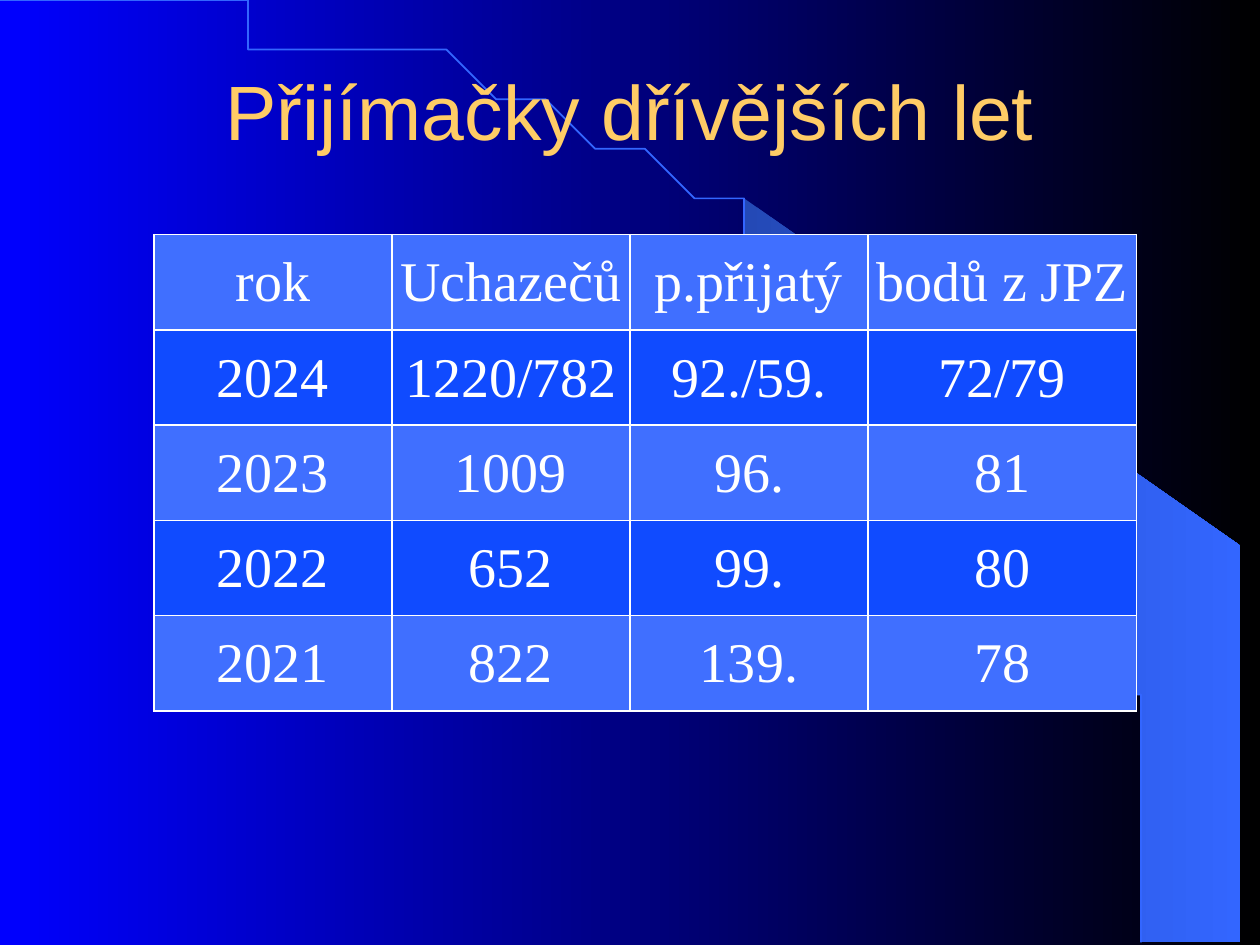
from math import asin, cos, pi, sin

from lxml.etree import SubElement
from pptx import Presentation
from pptx.dml.color import RGBColor
from pptx.enum.text import MSO_ANCHOR, PP_ALIGN
from pptx.oxml.ns import qn
from pptx.util import Cm, Pt

TITLE = "Přijímačky dřívějších let"
ROWS = [
    ("rok", "Uchazečů", "p.přijatý", "bodů z JPZ"),
    ("2024", "1220/782", "92./59.", "72/79"),
    ("2023", "1009", "96.", "81"),
    ("2022", "652", "99.", "80"),
    ("2021", "822", "139.", "78"),
]
COLUMN_WIDTHS = (4.8, 4.8, 4.8, 5.41)
ROW_HEIGHT = 1.92
BAND_FILLS = ("406FFF", "104BFF")
ARC_WIDTH, ARC_HEIGHT = 23.37, 19.02
BEAM_LEFT, BEAM_RIGHT, BEAM_CORNER = 14.96, 25.37, 10.74


def rgb(value):
    """Turn a hex string into a colour."""
    return RGBColor.from_string(value)


def fill_gradient(fill, *colours):
    """Apply a left-to-right gradient of two colours."""
    fill.gradient()
    fill.gradient_angle = 0
    for stop, colour in zip(fill.gradient_stops, colours):
        stop.color.rgb = rgb(colour)


def arc_points(start, steps=60):
    """List points on the quarter ellipse from the start angle to its foot."""
    angles = [start + (pi / 2 - start) * step / steps for step in range(steps + 1)]
    return [(ARC_WIDTH * sin(a), ARC_HEIGHT * (1 - cos(a))) for a in angles]


def add_outline(slide, points, close):
    """Draw a freeform through points given in centimetres."""
    builder = slide.shapes.build_freeform(*points[0], scale=Cm(1))
    builder.add_line_segments(points[1:], close=close)
    shape = builder.convert_to_shape()
    shape.shadow.inherit = False
    return shape


def add_text(paragraph, text, font_name, size, colour):
    """Add one centred, formatted run."""
    paragraph.alignment = PP_ALIGN.CENTER
    run = paragraph.add_run()
    run.text = text
    run.font.name = font_name
    run.font.size = Pt(size)
    run.font.color.rgb = rgb(colour)


def add_borders(cell, colour, width):
    """Give a cell the same line on all four sides."""
    properties = cell._tc.get_or_add_tcPr()
    for position, side in enumerate(("a:lnL", "a:lnR", "a:lnT", "a:lnB")):
        line = SubElement(properties, qn(side), w=str(Pt(width)))
        SubElement(SubElement(line, qn("a:solidFill")), qn("a:srgbClr"), val=colour)
        properties.insert(position, line)


def add_backdrop(slide):
    """Draw the background, the beam and the arc."""
    fill_gradient(slide.background.fill, "0000FF", "000000")
    edge = arc_points(asin(BEAM_LEFT / ARC_WIDTH))
    corners = [(BEAM_RIGHT, ARC_HEIGHT), (BEAM_RIGHT, BEAM_CORNER)]
    beam = add_outline(slide, edge + corners, True)
    fill_gradient(beam.fill, "2449B6", "3366FF")
    beam.line.fill.background()
    arc = add_outline(slide, arc_points(0), False)
    arc.fill.background()
    arc.line.color.rgb = rgb("3366FF")
    arc.line.width = Pt(1)


def add_title(slide):
    """Place the title in front of the backdrop."""
    title = slide.shapes.title
    title.element.getparent().append(title.element)
    title.left, title.top, title.width, title.height = Cm(1.9), Cm(0.91), Cm(21.6), Cm(2.59)
    title.text_frame.vertical_anchor = MSO_ANCHOR.MIDDLE
    add_text(title.text_frame.paragraphs[0], TITLE, "Arial", 44, "FFCC66")


def add_results(slide):
    """Build the table of past admission results."""
    table = slide.shapes.add_table(
        len(ROWS), len(COLUMN_WIDTHS), Cm(3.1), Cm(4.73),
        Cm(sum(COLUMN_WIDTHS)), Cm(ROW_HEIGHT * len(ROWS)),
    ).table
    for column, width in zip(table.columns, COLUMN_WIDTHS):
        column.width = Cm(width)
    for index, (row, texts) in enumerate(zip(table.rows, ROWS)):
        row.height = Cm(ROW_HEIGHT)
        for cell, text in zip(row.cells, texts):
            cell.margin_left = cell.margin_right = cell.margin_top = Cm(0.03)
            cell.margin_bottom = 0
            cell.vertical_anchor = MSO_ANCHOR.MIDDLE
            cell.fill.solid()
            cell.fill.fore_color.rgb = rgb(BAND_FILLS[index % 2])
            add_borders(cell, "FFFFFF", 1)
            add_text(cell.text_frame.paragraphs[0], text, "Times New Roman", 32, "FFFFFF")


def main():
    """Build and save the slide."""
    presentation = Presentation()
    presentation.slide_width, presentation.slide_height = Cm(25.4), Cm(19.05)
    slide = presentation.slides.add_slide(presentation.slide_layouts[5])
    add_backdrop(slide)
    add_title(slide)
    add_results(slide)
    presentation.save("out.pptx")


if __name__ == "__main__":
    main()
